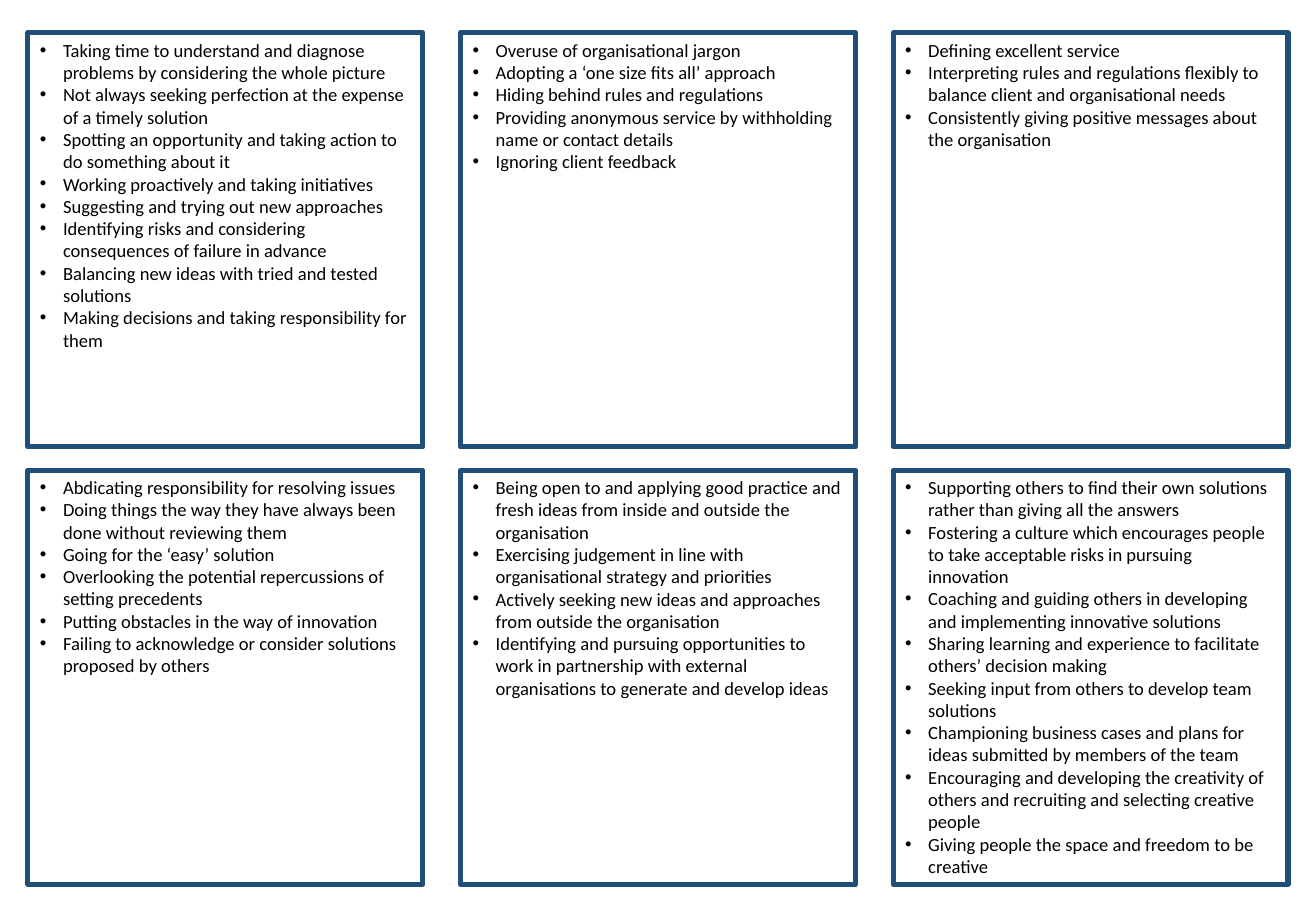
from lxml import etree
from pptx import Presentation
from pptx.dml.color import RGBColor
from pptx.enum.shapes import MSO_SHAPE
from pptx.enum.text import MSO_ANCHOR, MSO_AUTO_SIZE, PP_ALIGN
from pptx.oxml.ns import qn
from pptx.util import Pt

RECT = MSO_SHAPE.RECTANGLE
TOP = MSO_ANCHOR.TOP
GROW = MSO_AUTO_SIZE.SHAPE_TO_FIT_TEXT
LEFT = PP_ALIGN.LEFT
PX = 9144
WIDE, HIGH = 325, 341
INDENT = 19


def color(code):
    return RGBColor.from_string(code)


def write(para, text, size=11, font="Calibri", ink="000000"):
    run = para.add_run()
    run.text = text
    run.font.size = Pt(size)
    run.font.name = font
    run.font.color.rgb = color(ink)
    para.alignment = LEFT
    props = para._p.get_or_add_pPr()
    props.set("marL", str(INDENT * PX))
    props.set("indent", str(-INDENT * PX))
    etree.SubElement(props, qn("a:buFont")).set("typeface", "Arial")
    etree.SubElement(props, qn("a:buChar")).set("char", "•")


cards = [
    (269, [
        "Taking time to understand and diagnose problems by considering the whole picture",
        "Not always seeking perfection at the expense of a timely solution",
        "Spotting an opportunity and taking action to do something about it",
        "Working proactively and taking initiatives",
        "Suggesting and trying out new approaches",
        "Identifying risks and considering consequences of failure in advance",
        "Balancing new ideas with tried and tested solutions",
        "Making decisions and taking responsibility for them",
    ]),
    (121, [
        "Overuse of organisational jargon",
        "Adopting a ‘one size fits all’ approach",
        "Hiding behind rules and regulations",
        "Providing anonymous service by withholding name or contact details",
        "Ignoring client feedback",
    ]),
    (121, [
        "Defining excellent service",
        "Interpreting rules and regulations flexibly to balance client and organisational needs",
        "Consistently giving positive messages about the organisation",
    ]),
    (177, [
        "Abdicating responsibility for resolving issues",
        "Doing things the way they have always been done without reviewing them",
        "Going for the ‘easy’ solution",
        "Overlooking the potential repercussions of setting precedents",
        "Putting obstacles in the way of innovation",
        "Failing to acknowledge or consider solutions proposed by others",
    ]),
    (195, [
        "Being open to and applying good practice and fresh ideas from inside and outside the organisation",
        "Exercising judgement in line with organisational strategy and priorities",
        "Actively seeking new ideas and approaches from outside the organisation",
        "Identifying and pursuing opportunities to work in partnership with external organisations to generate and develop ideas",
    ]),
    (343, [
        "Supporting others to find their own solutions rather than giving all the answers",
        "Fostering a culture which encourages people to take acceptable risks in pursuing innovation",
        "Coaching and guiding others in developing and implementing innovative solutions",
        "Sharing learning and experience to facilitate others’ decision making",
        "Seeking input from others to develop team solutions",
        "Championing business cases and plans for ideas submitted by members of the team",
        "Encouraging and developing the creativity of others and recruiting and selecting creative people",
        "Giving people the space and freedom to be creative",
    ]),
]

deck = Presentation()
deck.slide_width = 1083 * PX
deck.slide_height = 750 * PX
slide = deck.slides.add_slide(deck.slide_layouts[6])

spots = [((23 + col * 356) * PX, (27 + row * 360) * PX)
         for row in range(2) for col in range(3)]

for x, y in spots:
    frame = slide.shapes.add_shape(RECT, x, y, WIDE * PX, HIGH * PX)
    frame.shadow.inherit = False
    frame.fill.background()
    frame.line.color.rgb = color("1F4E79")
    frame.line.width = Pt(3)

for (x, y), (tall, points) in zip(spots, cards):
    box = slide.shapes.add_textbox(x, y, WIDE * PX, tall * PX)
    body = box.text_frame
    body.word_wrap = True
    body.auto_size = GROW
    body.vertical_anchor = TOP
    for i, point in enumerate(points):
        para = body.add_paragraph() if i else body.paragraphs[0]
        write(para, point)

deck.save("out.pptx")
